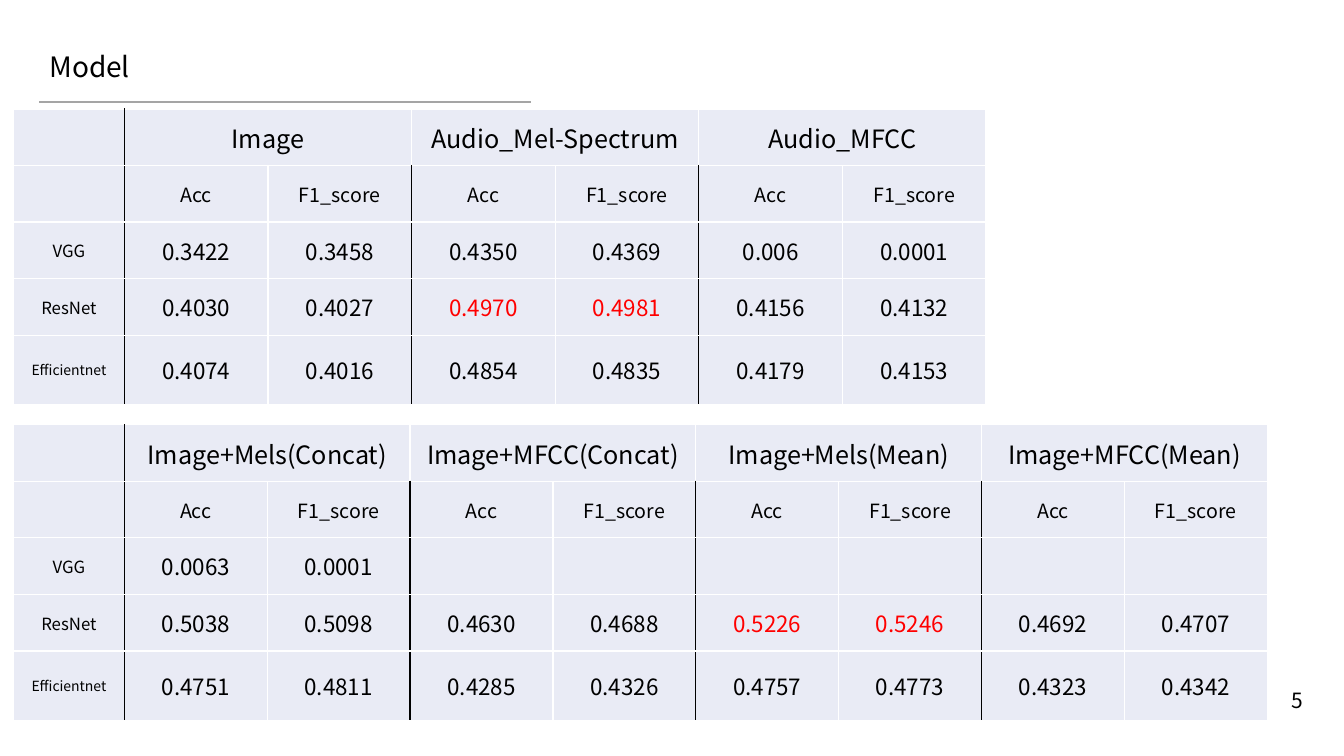
"""Build a slide with two tables of model accuracy and F1 scores."""
from lxml import etree
from pptx import Presentation
from pptx.dml.color import RGBColor
from pptx.enum.shapes import MSO_CONNECTOR
from pptx.enum.text import MSO_ANCHOR, PP_ALIGN
from pptx.oxml.ns import qn
from pptx.util import Pt

STRAIGHT = MSO_CONNECTOR.STRAIGHT
TOP, MIDDLE = MSO_ANCHOR.TOP, MSO_ANCHOR.MIDDLE
LEFT, CENTER, RIGHT = PP_ALIGN.LEFT, PP_ALIGN.CENTER, PP_ALIGN.RIGHT

FONT = "Noto Sans CJK KR"
COLORS = {"text": "000000", "best": "FF0000", "cell": "E9EBF5",
          "divider": "000000", "grid": "FFFFFF", "rule": "A5A5A5"}

TITLE = "Model"
PAGE_NUMBER = "5"
METRICS = ("Acc", "F1_score")
MODELS = (("VGG", 12), ("ResNet", 12), ("Efficientnet", 10))
FUSION = {
    "top": 303.4, "metric_width": 102.06,
    "groups": ("Image+Mels(Concat)", "Image+MFCC(Concat)",
               "Image+Mels(Mean)", "Image+MFCC(Mean)"),
    "scores": (
        ("0.0063", "0.0001", "", "", "", "", "", ""),
        ("0.5038", "0.5098", "0.4630", "0.4688", "0.5226", "0.5246", "0.4692", "0.4707"),
        ("0.4751", "0.4811", "0.4285", "0.4326", "0.4757", "0.4773", "0.4323", "0.4342"),
    ),
    "best": ("0.5226", "0.5246"),
}
SINGLE = {
    "top": 77.8, "metric_width": 102.6,
    "groups": ("Image", "Audio_Mel-Spectrum", "Audio_MFCC"),
    "scores": (
        ("0.3422", "0.3458", "0.4350", "0.4369", "0.006", "0.0001"),
        ("0.4030", "0.4027", "0.4970", "0.4981", "0.4156", "0.4132"),
        ("0.4074", "0.4016", "0.4854", "0.4835", "0.4179", "0.4153"),
    ),
    "best": ("0.4970", "0.4981"),
}
TABLE_LEFT = 9.6
LABEL_WIDTH = 79.2
ROW_HEIGHTS = (40.4, 40.4, 40.4, 40.4, 49.6)


def write_text(frame, text, size, color="text", align=CENTER, anchor=MIDDLE):
    """Put one formatted line into a text frame or table cell."""
    frame.vertical_anchor = anchor
    text_frame = getattr(frame, "text_frame", frame)
    paragraph = text_frame.paragraphs[0]
    paragraph.alignment = align
    run = paragraph.add_run()
    run.text = text
    run.font.size = Pt(size)
    run.font.name = FONT
    run.font.color.rgb = RGBColor.from_string(COLORS[color])


def style_cell(cell, left, right):
    """Set the borders and the fill of a table cell."""
    properties = cell._tc.get_or_add_tcPr()
    sides = {"a:lnL": left, "a:lnR": right, "a:lnT": "grid", "a:lnB": "grid"}
    for tag, color in sides.items():
        line = etree.SubElement(properties, qn(tag), w=str(Pt(1)))
        fill = etree.SubElement(line, qn("a:solidFill"))
        etree.SubElement(fill, qn("a:srgbClr"), val=COLORS[color])
    cell.fill.solid()
    cell.fill.fore_color.rgb = RGBColor.from_string(COLORS["cell"])


def edge_color(row, edge):
    """Return the color of the vertical edge left of a column."""
    divides = edge == 1 or (row > 0 and edge % 2 == 1)
    return "divider" if divides else "grid"


def add_score_table(slide, content):
    """Add one table with paired metric columns under each group."""
    groups = content["groups"]
    column_count = 1 + len(METRICS) * len(groups)
    widths = [LABEL_WIDTH] + [content["metric_width"]] * (column_count - 1)
    table = slide.shapes.add_table(
        len(ROW_HEIGHTS), column_count, Pt(TABLE_LEFT), Pt(content["top"]),
        Pt(sum(widths)), Pt(sum(ROW_HEIGHTS))).table
    for column, width in zip(table.columns, widths):
        column.width = Pt(width)
    for row, height in zip(table.rows, ROW_HEIGHTS):
        row.height = Pt(height)

    for row in range(len(ROW_HEIGHTS)):
        for column in range(column_count):
            following = column + 1
            right = "grid" if following == column_count else edge_color(row, following)
            style_cell(table.cell(row, column), edge_color(row, column), right)

    for index, group in enumerate(groups):
        first = 1 + index * len(METRICS)
        table.cell(0, first).merge(table.cell(0, first + 1))
        write_text(table.cell(0, first), group, size=18)
        for offset, metric in enumerate(METRICS):
            write_text(table.cell(1, first + offset), metric, size=14)

    for row, ((model, size), scores) in enumerate(zip(MODELS, content["scores"]), 2):
        write_text(table.cell(row, 0), model, size=size)
        for column, score in enumerate(scores, 1):
            if score:
                color = "best" if score in content["best"] else "text"
                write_text(table.cell(row, column), score, size=16, color=color)


def main():
    """Build and save the presentation."""
    presentation = Presentation()
    presentation.slide_width, presentation.slide_height = Pt(960), Pt(540)
    slide = presentation.slides.add_slide(presentation.slide_layouts[5])

    title = slide.shapes.title
    title.left, title.top, title.width, title.height = Pt(28), Pt(31.7), Pt(904), Pt(31.7)
    write_text(title.text_frame, TITLE, size=20, align=LEFT)

    rule = slide.shapes.add_connector(STRAIGHT, Pt(28), Pt(72.7), Pt(379.4), Pt(72.7))
    rule.line.color.rgb = RGBColor.from_string(COLORS["rule"])
    rule.line.width = Pt(1.5)
    etree.SubElement(rule._element.spPr, qn("a:effectLst"))

    number = slide.shapes.add_textbox(Pt(895.7), Pt(486), Pt(42.5), Pt(28.8))
    number.text_frame.word_wrap = True
    write_text(number.text_frame, PAGE_NUMBER, size=15, align=RIGHT)

    for content in (FUSION, SINGLE):
        add_score_table(slide, content)
    presentation.save("out.pptx")


if __name__ == "__main__":
    main()
